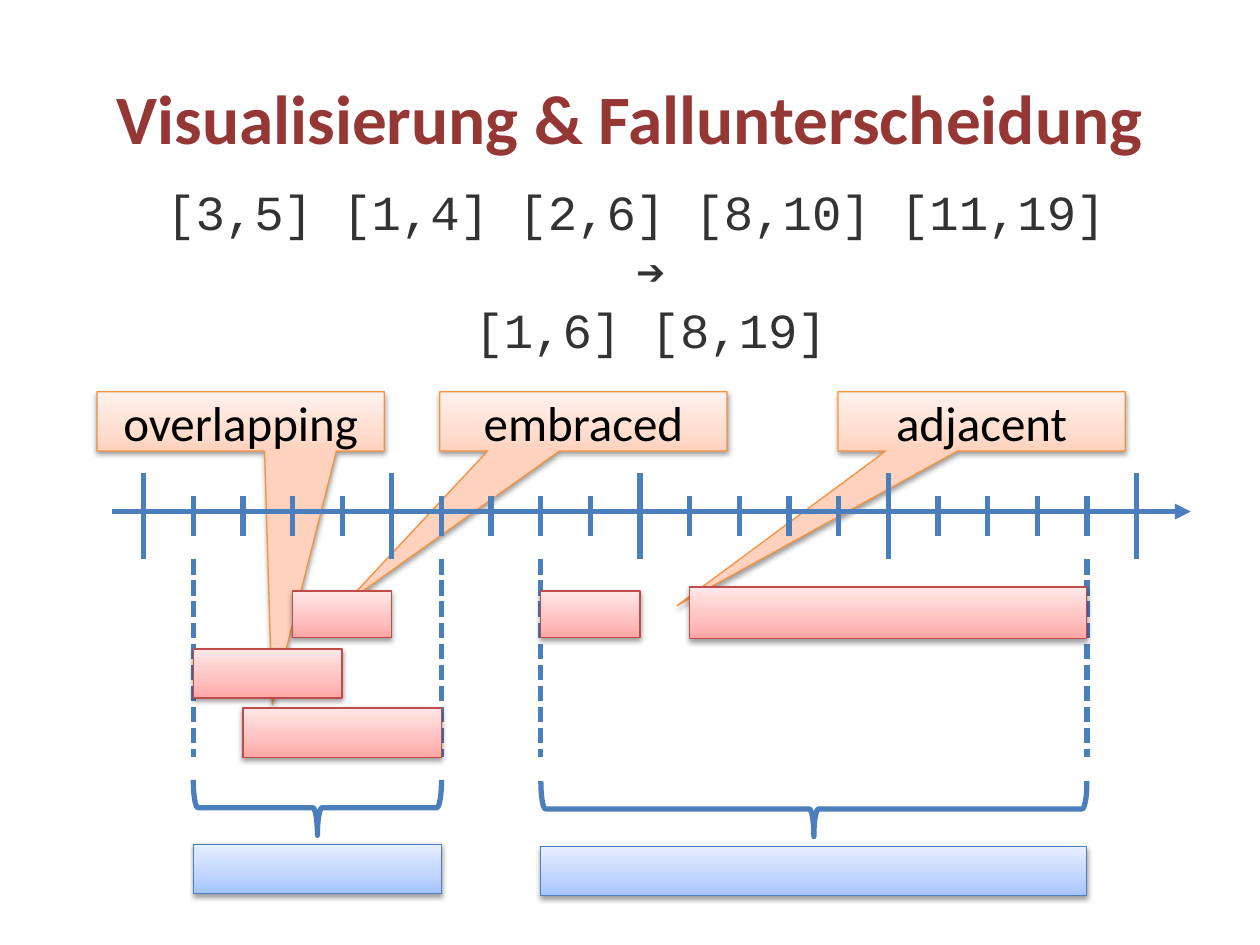
from copy import deepcopy

from lxml import etree
from pptx import Presentation
from pptx import util as u
from pptx.dml.color import RGBColor
from pptx.enum import dml, shapes, text
from pptx.oxml.ns import qn

THEME = {
    "title": {"name": "Calibri", "size": u.Pt(39.6), "bold": True, "color": "953735"},
    "code": {"name": "Courier New", "size": u.Pt(28), "color": "333333"},
    "label": {"name": "Calibri", "size": u.Pt(28), "color": "000000"},
    "callout": {"line": "F69240", "stops": ("FFD2BD", "FFDED0", "FFF2ED")},
    "input": {"line": "BF4C48", "stops": ("FFA6A5", "FFC0BF", "FFE7E7")},
    "merged": {"line": "4B7EBC", "stops": ("A4C4FF", "BFD4FF", "E6EEFF")},
    "axis": RGBColor.from_string("4B7EBC"),
    "axis_width": u.Pt(3),
}

# Number line: values 0 to 20 on evenly spaced columns (inches)
FIRST, LAST, COUNT = 1.14, 9.02, 20
COLUMN = (LAST - FIRST) / COUNT
AXIS_Y = 4.06
columns = [FIRST + COLUMN * value for value in range(COUNT + 1)]

deck = Presentation()
deck.slide_width, deck.slide_height = u.Inches(10), u.Inches(7.5)
page = deck.slides.add_slide(deck.slide_layouts[5])


def add_panel(kind, left, top, width, height, look):
    """Add a shape with a three-stop vertical gradient and a soft shadow."""
    box = page.shapes.add_shape(kind, *map(u.Inches, (left, top, width, height)))
    box.line.color.rgb = RGBColor.from_string(look["line"])
    box.line.width = u.Pt(0.75)
    box.fill.gradient()
    box.fill.gradient_angle = 90
    stop_list = box._element.spPr.find(".//" + qn("a:gsLst"))
    stop_list.append(deepcopy(stop_list[-1]))
    for stop, place, color in zip(box.fill.gradient_stops, (0, 0.35, 1), look["stops"]):
        stop.position = place
        stop.color.rgb = RGBColor.from_string(color)
    box.shadow.inherit = False
    shadow = etree.SubElement(
        box._element.spPr.find(qn("a:effectLst")), qn("a:outerShdw"),
        blurRad=str(u.Pt(3.1)), dist=str(u.Pt(1.6)), dir="5400000", rotWithShape="0")
    black = etree.SubElement(shadow, qn("a:srgbClr"), val="000000")
    etree.SubElement(black, qn("a:alpha"), val="38000")
    return box


def add_line(x1, y1, x2, y2):
    """Add a plain line in the axis style."""
    line = page.shapes.add_connector(
        shapes.MSO_CONNECTOR.STRAIGHT, *map(u.Inches, (x1, y1, x2, y2)))
    line.line.color.rgb = THEME["axis"]
    line.line.width = THEME["axis_width"]
    etree.SubElement(line._element.spPr, qn("a:effectLst"))
    return line


written = []  # (paragraph, wording, style name)

# Title
title = page.shapes.title
title.left, title.top, title.width, title.height = map(u.Inches, (0.5, 0.3, 9, 1.25))
title.text_frame.vertical_anchor = text.MSO_ANCHOR.MIDDLE
written.append((title.text_frame.paragraphs[0], "Visualisierung & Fallunterscheidung", "title"))

# Intervals before and after merging
intervals = page.shapes.add_textbox(*map(u.Inches, (0.61, 1.39, 9.11, 1.51))).text_frame
intervals.word_wrap = True
for row, wording in enumerate(("[3,5] [1,4] [2,6] [8,10] [11,19] ", "➔", "[1,6] [8,19]")):
    para = intervals.add_paragraph() if row else intervals.paragraphs[0]
    written.append((para, wording, "code"))

# Callouts: wording, left, pointer offset from the centre as shares of the size
for wording, left, pointer in (
    ("adjacent", 6.65, (-1.06, 3.11)),
    ("overlapping", 0.77, (0.11, 4.78)),
    ("embraced", 3.49, (-0.83, 3.08)),
):
    callout = add_panel(shapes.MSO_SHAPE.RECTANGULAR_CALLOUT, left, 3.11, 2.28, 0.47,
                        THEME["callout"])
    callout.adjustments[0], callout.adjustments[1] = pointer
    callout.text_frame.vertical_anchor = text.MSO_ANCHOR.MIDDLE
    written.append((callout.text_frame.paragraphs[0], wording, "label"))

# Format all wording
for para, wording, style in written:
    para.alignment = text.PP_ALIGN.CENTER
    span = para.add_run()
    span.text = wording
    for name, value in THEME[style].items():
        if name == "color":
            span.font.color.rgb = RGBColor.from_string(value)
        else:
            setattr(span.font, name, value)

# Dashed bounds of the merged intervals
for value in (1, 6, 8, 19):
    bound = add_line(columns[value], 4.44, columns[value], 6.01)
    bound.line.dash_style = dml.MSO_LINE.SQUARE_DOT

# Axis with arrowhead, and a longer tick at every fifth value
axis = add_line(0.89, AXIS_Y, 9.45, AXIS_Y)
etree.SubElement(axis.line._get_or_add_ln(), qn("a:tailEnd"), type="triangle")
for value, x in enumerate(columns):
    top, bottom = (3.75, 4.44) if value % 5 == 0 else (3.94, 4.25)
    add_line(x, top, x, bottom)

# Interval bars: start, end, top, height, look
for start, end, top, height, look in (
    (3, 5, 4.69, 0.37, "input"),
    (1, 4, 5.15, 0.39, "input"),
    (2, 6, 5.62, 0.39, "input"),
    (8, 10, 4.69, 0.37, "input"),
    (11, 19, 4.66, 0.41, "input"),
    (1, 6, 6.7, 0.39, "merged"),
    (8, 19, 6.72, 0.39, "merged"),
):
    add_panel(shapes.MSO_SHAPE.RECTANGLE, columns[start], top,
              COLUMN * (end - start), height, THEME[look])

# Braces, turned a quarter so that they point down at the merged bars
DEPTH = 0.44
for start, end, middle_y in ((1, 6, 6.41), (8, 19, 6.42)):
    span_width = COLUMN * (end - start)
    middle_x = (columns[start] + columns[end]) / 2
    brace = page.shapes.add_shape(
        shapes.MSO_SHAPE.RIGHT_BRACE,
        *map(u.Inches, (middle_x - DEPTH / 2, middle_y - span_width / 2, DEPTH, span_width)))
    brace.rotation = 90
    brace.fill.background()
    brace.line.color.rgb = THEME["axis"]
    brace.line.width = THEME["axis_width"]
    brace.shadow.inherit = False

deck.save("out.pptx")
